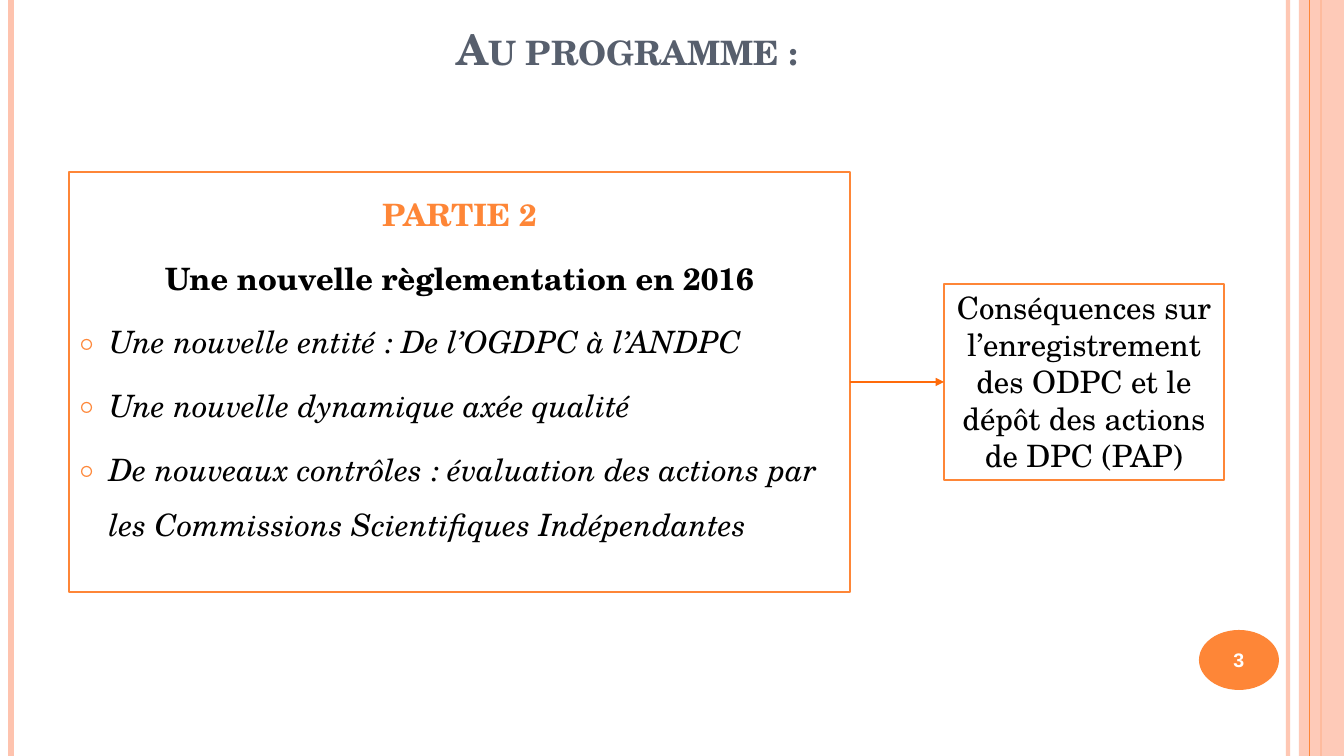
from lxml import etree
from pptx import Presentation
from pptx import util as u
from pptx.dml.color import RGBColor
from pptx.enum import shapes, text
from pptx.oxml import ns

SCALE = u.Inches(1) / 100.8
WIDTH, HEIGHT = 1344, 756
SERIF = "TeX Gyre Schola"
ORANGE, PEACH, BLACK, WHITE = "FE8637", "FEC3AE", "000000", "FFFFFF"


def px(length):
    return u.Emu(round(length * SCALE))


def paint(color_format, value):
    color_format.rgb = RGBColor.from_string(value)


def add_xml(parent, tag, **attributes):
    return etree.SubElement(parent, ns.qn(tag), attributes)


def set_alpha(element, percent):
    for color in element.iter(ns.qn("a:srgbClr")):
        add_xml(color, "a:alpha", val=str(percent * 1000))


def add_line(slide, start, end, color, weight, alpha=100):
    line = slide.shapes.add_connector(
        shapes.MSO_CONNECTOR.STRAIGHT, *map(px, (*start, *end)))
    paint(line.line.color, color)
    line.line.width = u.Pt(weight)
    add_xml(line._element.spPr, "a:effectLst")
    if alpha < 100:
        set_alpha(line._element.spPr, alpha)
    return line


def add_panel(slide, kind, box, fill, border=None):
    panel = slide.shapes.add_shape(kind, *map(px, box))
    panel.shadow.inherit = False
    panel.fill.solid()
    paint(panel.fill.fore_color, fill)
    if border:
        paint(panel.line.color, border)
        panel.line.width = u.Pt(2)
    else:
        panel.line.fill.background()
    panel.text_frame.word_wrap = True
    return panel


def add_run(paragraph, words, size, color, font=SERIF, bold=False, italic=False):
    run = paragraph.add_run()
    run.text = words
    run.font.name, run.font.size = font, u.Pt(size)
    run.font.bold, run.font.italic = bold, italic
    paint(run.font.color, color)
    return run


def add_bullet(paragraph, indent):
    properties = paragraph._p.get_or_add_pPr()
    properties.set("marL", str(px(indent)))
    properties.set("indent", str(-px(indent)))
    add_xml(add_xml(properties, "a:buClr"), "a:srgbClr", val=ORANGE)
    add_xml(properties, "a:buSzPct", val="70000")
    add_xml(properties, "a:buFont", typeface=SERIF)
    add_xml(properties, "a:buChar", char="○")


def draw_edges(slide, height):
    stripes = [(1288, PEACH, 3, 93), (11, PEACH, 4.5, 100), (1321, ORANGE, 1.5, 100)]
    for x, color, weight, alpha in stripes:
        add_line(slide, (x, 0), (x, height), color, weight, alpha)
    band = add_panel(slide, shapes.MSO_SHAPE.RECTANGLE,
                     (1299, 0, WIDTH - 1299, height), PEACH)
    set_alpha(band._element.spPr, 87)
    add_line(slide, (1310, 0), (1310, height), ORANGE, 0.75)


def draw_page_number(slide, box, number):
    badge = add_panel(slide, shapes.MSO_SHAPE.OVAL, box, ORANGE)
    badge.text_frame.vertical_anchor = text.MSO_ANCHOR.MIDDLE
    paragraph = badge.text_frame.paragraphs[0]
    paragraph.alignment = text.PP_ALIGN.CENTER
    add_run(paragraph, number, 14, WHITE, "Arial", bold=True)


def draw_title(slide, box, words):
    title = slide.shapes.title
    title.left, title.top, title.width, title.height = map(px, box)
    frame = title.text_frame
    frame.auto_size = text.MSO_AUTO_SIZE.NONE
    frame.vertical_anchor = text.MSO_ANCHOR.BOTTOM
    paragraph = frame.paragraphs[0]
    paragraph.alignment = text.PP_ALIGN.CENTER
    run = add_run(paragraph, words, 30, "575F6D", bold=True)
    run.font._element.set("cap", "small")


def draw_programme(slide, box, headings, topics):
    programme = add_panel(slide, shapes.MSO_SHAPE.RECTANGLE, box, WHITE, ORANGE)
    frame = programme.text_frame
    frame.vertical_anchor = text.MSO_ANCHOR.TOP
    entries = [(words, color, True) for words, color in headings]
    entries += [(words, BLACK, False) for words in topics]
    for index, (words, color, heading) in enumerate(entries):
        paragraph = frame.add_paragraph() if index else frame.paragraphs[0]
        paragraph.line_spacing = 1.5
        paragraph.space_before = u.Pt(6)
        paragraph.alignment = text.PP_ALIGN.CENTER if heading else text.PP_ALIGN.LEFT
        if not heading:
            add_bullet(paragraph, 30)
        add_run(paragraph, words, 22, color, bold=heading, italic=not heading)
    return programme


def draw_consequences(slide, box, words):
    consequences = add_panel(slide, shapes.MSO_SHAPE.RECTANGLE, box, WHITE, ORANGE)
    consequences.text_frame.vertical_anchor = text.MSO_ANCHOR.TOP
    paragraph = consequences.text_frame.paragraphs[0]
    paragraph.alignment = text.PP_ALIGN.CENTER
    add_run(paragraph, words, 22, BLACK)
    return consequences


def link(slide, source, target):
    arrow = add_line(slide, (0, 0), (0, 0), "FF6B0A", 1)
    arrow.begin_connect(source, 3)
    arrow.end_connect(target, 1)
    add_xml(arrow.line._get_or_add_ln(), "a:tailEnd", type="triangle")


def main():
    deck = Presentation()
    deck.slide_width, deck.slide_height = px(WIDTH), px(HEIGHT)
    slide = deck.slides.add_slide(deck.slide_layouts.get_by_name("Title Only"))
    draw_edges(slide, HEIGHT)
    draw_page_number(slide, (1199, 630, 80, 60), "3")
    draw_title(slide, (78, 0, 1098, 79), "Au programme :")
    programme = draw_programme(
        slide, (69, 172, 781, 420),
        [("PARTIE 2", ORANGE), ("Une nouvelle règlementation en 2016", BLACK)],
        ["Une nouvelle entité : De l’OGDPC à l’ANDPC",
         "Une nouvelle dynamique axée qualité",
         "De nouveaux contrôles : évaluation des actions par "
         "les Commissions Scientifiques Indépendantes"])
    consequences = draw_consequences(
        slide, (944, 284, 280, 196),
        "Conséquences sur l’enregistrement des ODPC et le dépôt des actions de DPC (PAP)")
    link(slide, programme, consequences)
    deck.save("out.pptx")


if __name__ == "__main__":
    main()
